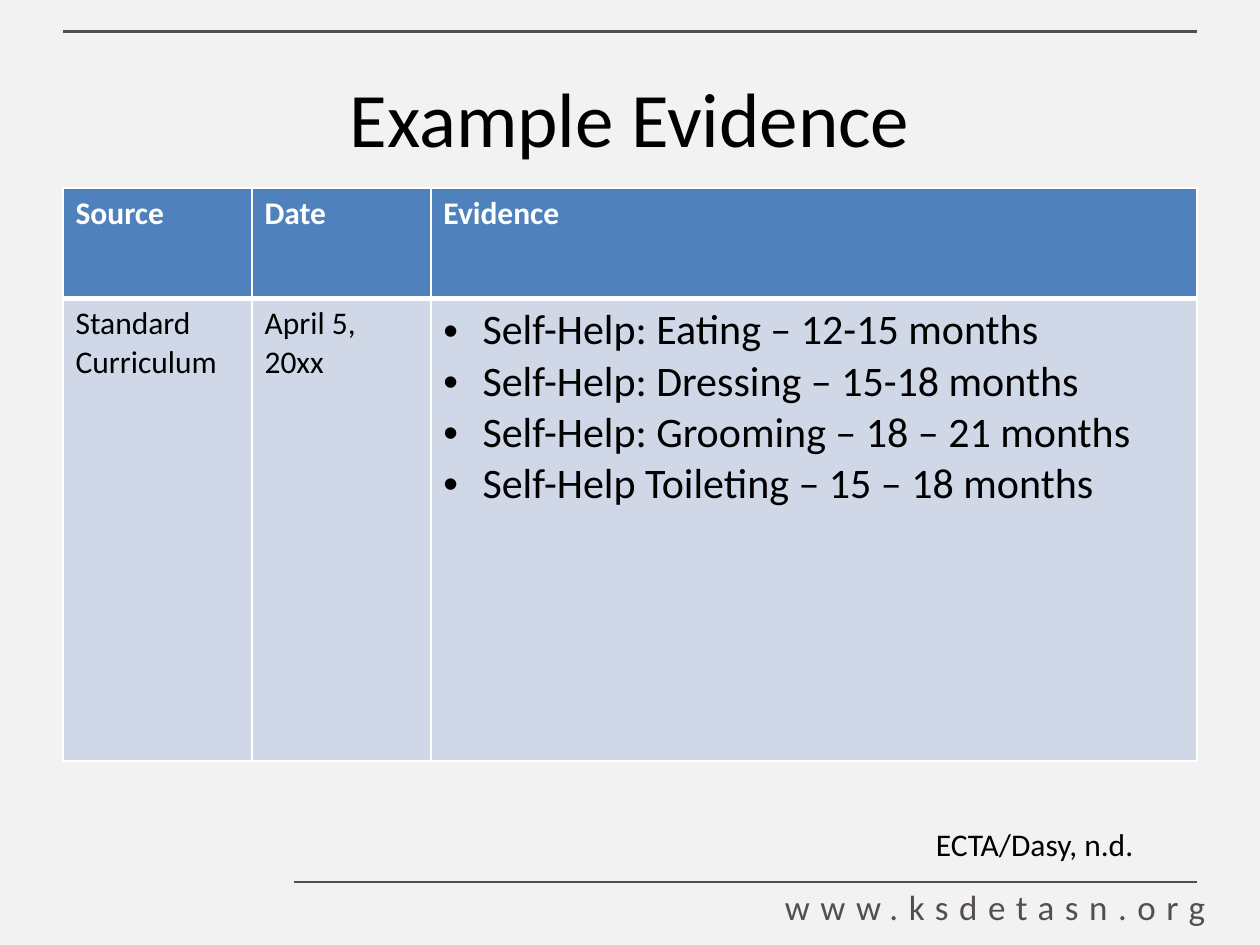
from lxml.etree import SubElement
from pptx import Presentation
from pptx.dml.color import RGBColor
from pptx.enum.shapes import MSO_CONNECTOR
from pptx.enum.text import MSO_ANCHOR, PP_ALIGN
from pptx.oxml.ns import qn
from pptx.util import Inches, Pt

# Content
TITLE = "Example Evidence"
HEADS = ["Source", "Date", "Evidence"]
BODY = [
    ["Standard Curriculum"],
    ["April 5, 20xx"],
    [
        "Self-Help: Eating – 12-15 months",
        "Self-Help: Dressing – 15-18 months",
        "Self-Help: Grooming – 18 – 21 months",
        "Self-Help Toileting – 15 – 18 months",
    ],
]
CREDIT = "ECTA/Dasy, n.d."
SITE = "www.ksdetasn.org"

# Layout and colours
COLS = [1.5, 1.42, 6.08]
ROWS = [0.88, 3.67]
RULES = [(0.5, 0.25, 2.25), (2.33, 7, 0.75)]  # left, top, weight
RIGHT = 9.5
INDENT = 0.31
BLACK, WHITE, GREY = "000000", "FFFFFF", "554E50"
BLUE, PALE, BACK = "4F81BD", "D0D8E8", "F2F2F2"


def color(code):
    return RGBColor.from_string(code)


def add_run(para, text, size, code, bold=False):
    run = para.add_run()
    run.text = text
    font = run.font
    font.name, font.size, font.bold = "Calibri", Pt(size), bold
    font.color.rgb = color(code)
    return run


def add_text(slide, box, text, size, code, wrap=True):
    frame = slide.shapes.add_textbox(*map(Inches, box)).text_frame
    frame.word_wrap = wrap
    return frame, add_run(frame.paragraphs[0], text, size, code)


def add_rule(slide, left, top, weight):
    line = slide.shapes.add_connector(
        MSO_CONNECTOR.STRAIGHT, *map(Inches, (left, top, RIGHT, top)))
    line.line.color.rgb = color(GREY)
    line.line.width = Pt(weight)
    SubElement(line._element.spPr, qn("a:effectLst"))


def add_bullet(para):
    props = para._p.get_or_add_pPr()
    props.set("marL", str(Inches(INDENT)))
    props.set("indent", str(-Inches(INDENT)))
    SubElement(props, qn("a:buFont")).set("typeface", "Arial")
    SubElement(props, qn("a:buChar")).set("char", "•")


def style_cell(cell, code, top, bottom):
    props = cell._tc.get_or_add_tcPr()
    for side, width in zip("LRTB", (1, 1, top, bottom)):
        edge = SubElement(props, qn("a:ln" + side), w=str(Pt(width)))
        fill = SubElement(edge, qn("a:solidFill"))
        SubElement(fill, qn("a:srgbClr"), val=WHITE)
    cell.fill.solid()
    cell.fill.fore_color.rgb = color(code)


def add_grid(slide):
    grid = slide.shapes.add_table(
        len(ROWS), len(COLS), Inches(0.5), Inches(1.49),
        Inches(sum(COLS)), Inches(sum(ROWS))).table
    for col, width in zip(grid.columns, COLS):
        col.width = Inches(width)
    for row, height in zip(grid.rows, ROWS):
        row.height = Inches(height)
    for i, (head, items) in enumerate(zip(HEADS, BODY)):
        # Header cell
        cell = grid.cell(0, i)
        style_cell(cell, BLUE, 1, 3)
        add_run(cell.text_frame.paragraphs[0], head, 18, WHITE, True)
        # Body cell, bulleted when it holds a list
        cell = grid.cell(1, i)
        style_cell(cell, PALE, 3, 1)
        frame = cell.text_frame
        listed = len(items) > 1
        for j, item in enumerate(items):
            para = frame.add_paragraph() if j else frame.paragraphs[0]
            if listed:
                add_bullet(para)
            add_run(para, item, 24 if listed else 18, BLACK)


def main():
    deck = Presentation()
    deck.slide_width, deck.slide_height = Inches(10), Inches(7.5)
    slide = deck.slides.add_slide(deck.slide_layouts[6])
    slide.background.fill.solid()
    slide.background.fill.fore_color.rgb = color(BACK)

    # Rules and web address
    for rule in RULES:
        add_rule(slide, *rule)
    _, run = add_text(slide, (6.13, 6.98, 3.65, 0.44), SITE, 20, GREY, False)
    run._r.get_or_add_rPr().set("spc", "600")

    # Title
    frame, _ = add_text(slide, (0.5, 0.3, 9, 1.25), TITLE, 44, BLACK)
    frame.vertical_anchor = MSO_ANCHOR.MIDDLE
    frame.paragraphs[0].alignment = PP_ALIGN.CENTER

    # Table and credit
    add_grid(slide)
    add_text(slide, (7.33, 6.5, 2.5, 0.4), CREDIT, 18, BLACK)
    deck.save("out.pptx")


if __name__ == "__main__":
    main()
